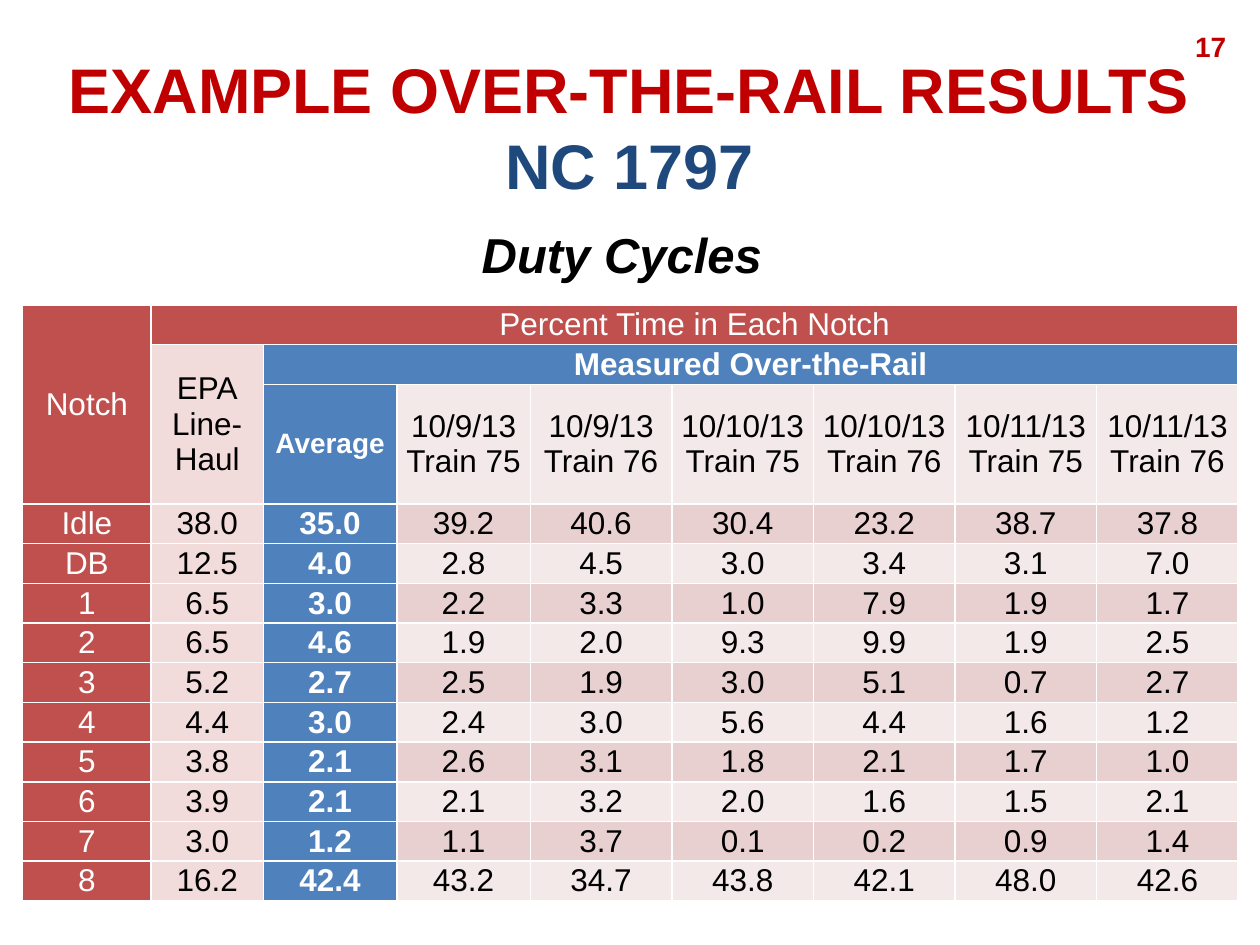
from pptx import Presentation
from pptx import util as u
from pptx.dml.color import RGBColor
from pptx.enum import text

FONT = "Arial"
CRIMSON = RGBColor(0xC0, 0x00, 0x00)
NAVY = RGBColor(0x1F, 0x49, 0x7D)
BLACK = RGBColor(0x00, 0x00, 0x00)
WHITE = RGBColor(0xFF, 0xFF, 0xFF)
RED = RGBColor(0xC0, 0x50, 0x4D)
BLUE = RGBColor(0x4F, 0x81, 0xBD)
PINK = RGBColor(0xF2, 0xDC, 0xDB)
BAND_DARK = RGBColor(0xE8, 0xD0, 0xD0)
BAND_LIGHT = RGBColor(0xF4, 0xE9, 0xE9)

TABLE_WIDTH, TABLE_HEIGHT = 9.65, 4.73
LEAD_WIDTHS = [1.02, 0.89, 1.06, 1.06]
DATE_ROW, DATE_ROW_HEIGHT = 2, 0.95

TRAINS = [f"{date}\nTrain {number}"
          for date in ("10/9/13", "10/10/13", "10/11/13")
          for number in (75, 76)]
ROWS = [
    ["Notch", "Percent Time in Each Notch"] + [""] * 7,
    ["", "EPA\nLine- Haul", "Measured Over-the-Rail"] + [""] * 6,
    ["", "", "Average"] + TRAINS,
    ["Idle", "38.0", "35.0", "39.2", "40.6", "30.4", "23.2", "38.7", "37.8"],
    ["DB", "12.5", "4.0", "2.8", "4.5", "3.0", "3.4", "3.1", "7.0"],
    ["1", "6.5", "3.0", "2.2", "3.3", "1.0", "7.9", "1.9", "1.7"],
    ["2", "6.5", "4.6", "1.9", "2.0", "9.3", "9.9", "1.9", "2.5"],
    ["3", "5.2", "2.7", "2.5", "1.9", "3.0", "5.1", "0.7", "2.7"],
    ["4", "4.4", "3.0", "2.4", "3.0", "5.6", "4.4", "1.6", "1.2"],
    ["5", "3.8", "2.1", "2.6", "3.1", "1.8", "2.1", "1.7", "1.0"],
    ["6", "3.9", "2.1", "2.1", "3.2", "2.0", "1.6", "1.5", "2.1"],
    ["7", "3.0", "1.2", "1.1", "3.7", "0.1", "0.2", "0.9", "1.4"],
    ["8", "16.2", "42.4", "43.2", "34.7", "43.8", "42.1", "48.0", "42.6"],
]
# First and last cell of each merged block, as (row, column)
MERGES = [((0, 0), (2, 0)), ((0, 1), (0, 8)),
          ((1, 1), (2, 1)), ((1, 2), (1, 8))]


def style(para, size, color, bold=True, italic=False,
          align=text.PP_ALIGN.CENTER):
    para.alignment = align
    font = para.font
    font.name, font.size = FONT, u.Pt(size)
    font.bold, font.italic = bold, italic
    font.color.rgb = color


def add_title(page, first_line, second_line):
    title = page.shapes.title
    title.left, title.top = u.Inches(0.33), u.Inches(0.3)
    title.width, title.height = u.Inches(9.33), u.Inches(1.41)
    frame = title.text_frame
    frame.auto_size = text.MSO_AUTO_SIZE.NONE
    frame.vertical_anchor = text.MSO_ANCHOR.MIDDLE
    para = frame.paragraphs[0]
    style(para, 36, CRIMSON)
    for line, color in ((first_line, CRIMSON), (second_line, NAVY)):
        if para.runs:
            para.add_line_break()
        span = para.add_run()
        span.text = line
        span.font.color.rgb = color


def add_label(page, words, left, top, width, height, anchor, **look):
    box = page.shapes.add_textbox(*map(u.Inches, (left, top, width, height)))
    frame = box.text_frame
    frame.word_wrap = True
    frame.vertical_anchor = anchor
    frame.text = words
    style(frame.paragraphs[0], **look)


def cell_look(row, column):
    """Return fill, text colour and boldness for a table position."""
    if row == 0 or column == 0:
        return RED, WHITE, False
    if column == 1:
        return PINK, BLACK, False
    if row == 1 or column == 2:
        return BLUE, WHITE, True
    return (BAND_DARK if row % 2 else BAND_LIGHT), BLACK, False


def fill_cell(cell, words, row, column):
    fill, color, bold = cell_look(row, column)
    cell.fill.solid()
    cell.fill.fore_color.rgb = fill
    cell.vertical_anchor = text.MSO_ANCHOR.MIDDLE
    cell.margin_left = cell.margin_right = u.Inches(0.07)
    cell.margin_top = cell.margin_bottom = 0
    cell.text = words
    size = 16 if words == "Average" else 18
    for para in cell.text_frame.paragraphs:
        style(para, size, color, bold)


def add_duty_table(page):
    row_count, column_count = len(ROWS), len(ROWS[0])
    table = page.shapes.add_table(
        row_count, column_count, u.Inches(0.18), u.Inches(2.42),
        u.Inches(TABLE_WIDTH), u.Inches(TABLE_HEIGHT)).table

    # Remaining columns and rows share the leftover space equally
    date_columns = column_count - len(LEAD_WIDTHS)
    date_width = (TABLE_WIDTH - sum(LEAD_WIDTHS)) / date_columns
    for column, width in zip(table.columns,
                             LEAD_WIDTHS + [date_width] * date_columns):
        column.width = u.Inches(width)
    row_height = (TABLE_HEIGHT - DATE_ROW_HEIGHT) / (row_count - 1)
    for index, row in enumerate(table.rows):
        row.height = u.Inches(DATE_ROW_HEIGHT if index == DATE_ROW
                              else row_height)

    for row, values in enumerate(ROWS):
        for column, words in enumerate(values):
            fill_cell(table.cell(row, column), words, row, column)
    for first, last in MERGES:
        table.cell(*first).merge(table.cell(*last))


def main():
    deck = Presentation()
    deck.slide_width, deck.slide_height = u.Inches(10), u.Inches(7.5)
    page = deck.slides.add_slide(deck.slide_layouts.get_by_name("Title Only"))

    # Page number and headings
    add_label(page, "17", 7.5, 0.17, 2.33, 0.4, text.MSO_ANCHOR.MIDDLE,
              size=16, color=CRIMSON, align=text.PP_ALIGN.RIGHT)
    add_title(page, "EXAMPLE OVER-THE-RAIL RESULTS", "NC 1797")
    add_label(page, "Duty Cycles", 0.25, 1.73, 9.37, 0.57,
              text.MSO_ANCHOR.TOP, size=28, color=BLACK, italic=True)

    # Duty cycle results
    add_duty_table(page)
    deck.save("out.pptx")


if __name__ == "__main__":
    main()
